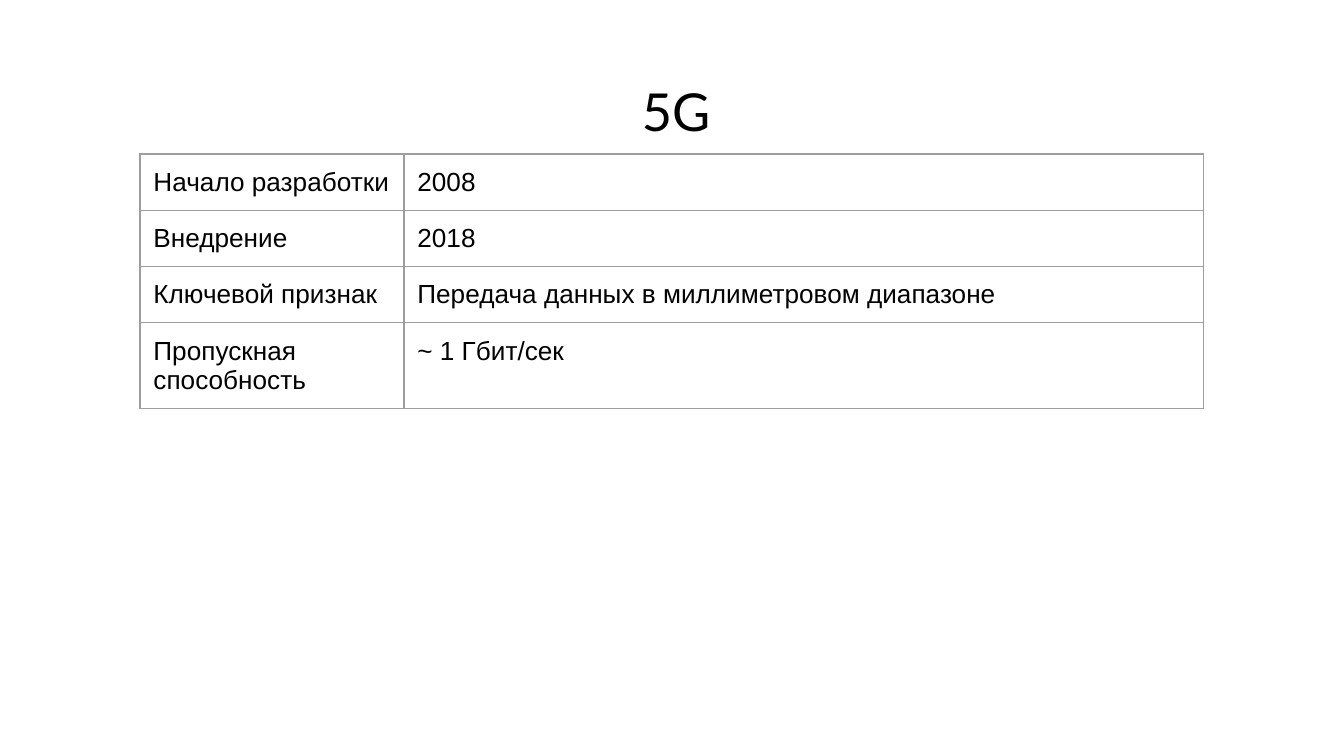
"""Build a slide with a table of facts about 5G."""
from typing import NamedTuple

from lxml.etree import SubElement
from pptx import Presentation
from pptx.dml.color import RGBColor
from pptx.enum.text import MSO_ANCHOR, MSO_AUTO_SIZE, PP_ALIGN
from pptx.oxml.ns import qn
from pptx.util import Pt

COLORS = {"text": "000000", "border": "9E9E9E", "page": "FFFFFF"}
INSET = Pt(7.2)
BORDER_WIDTH = Pt(0.75)
COLUMN_WIDTHS = (141.4, 428.4)
ROW_HEIGHT = 30


class Fact(NamedTuple):
    label: str
    value: str


FACTS = (
    Fact("Начало разработки", "2008"),
    Fact("Внедрение", "2018"),
    Fact("Ключевой признак", "Передача данных в миллиметровом диапазоне"),
    Fact("Пропускная способность", "~ 1 Гбит/сек"),
)


def write_text(frame, text: str, *, font: str, size: float,
               align=PP_ALIGN.LEFT, color: str = "text") -> None:
    para = frame.paragraphs[0]
    para.alignment = align
    para.line_spacing = 1.0
    para.space_before = para.space_after = Pt(0)
    span = para.add_run()
    span.text = text
    span.font.name = font
    span.font.size = Pt(size)
    span.font.bold = False
    span.font.color.rgb = RGBColor.from_string(COLORS[color])


def set_insets(target) -> None:
    target.margin_left = target.margin_right = INSET
    target.margin_top = target.margin_bottom = INSET


def add_borders(cell) -> None:
    properties = cell._tc.get_or_add_tcPr()
    for position, side in enumerate(("lnL", "lnR", "lnT", "lnB")):
        line = SubElement(properties, qn(f"a:{side}"), w=str(int(BORDER_WIDTH)))
        fill = SubElement(line, qn("a:solidFill"))
        SubElement(fill, qn("a:srgbClr"), val=COLORS["border"])
        properties.insert(position, line)


def draw_title(page, text: str) -> None:
    title = page.shapes.title
    title.left, title.top = Pt(28.8), Pt(35.3)
    title.width, title.height = Pt(666.7), Pt(45.4)
    frame = title.text_frame
    frame.auto_size = MSO_AUTO_SIZE.NONE
    frame.word_wrap = True
    frame.vertical_anchor = MSO_ANCHOR.TOP
    set_insets(frame)
    write_text(frame, text, font="Lato", size=28, align=PP_ALIGN.CENTER)


def draw_table(page, facts: tuple[Fact, ...]) -> None:
    frame = page.shapes.add_table(
        len(facts), len(COLUMN_WIDTHS), Pt(75), Pt(82.5),
        Pt(sum(COLUMN_WIDTHS)), Pt(ROW_HEIGHT * len(facts)))
    table = frame.table
    table.first_row = table.horz_banding = False
    for column, width in zip(table.columns, COLUMN_WIDTHS):
        column.width = Pt(width)
    for row, fact in zip(table.rows, facts):
        row.height = Pt(ROW_HEIGHT)
        for cell, text in zip(row.cells, fact):
            set_insets(cell)
            cell.vertical_anchor = MSO_ANCHOR.TOP
            cell.fill.background()
            add_borders(cell)
            write_text(cell.text_frame, text, font="Arial", size=14)


def main() -> None:
    deck = Presentation()
    deck.slide_width, deck.slide_height = Pt(720), Pt(405)
    page = deck.slides.add_slide(deck.slide_layouts[5])
    page.background.fill.solid()
    page.background.fill.fore_color.rgb = RGBColor.from_string(COLORS["page"])
    draw_title(page, "5G")
    draw_table(page, FACTS)
    deck.save("out.pptx")


if __name__ == "__main__":
    main()
